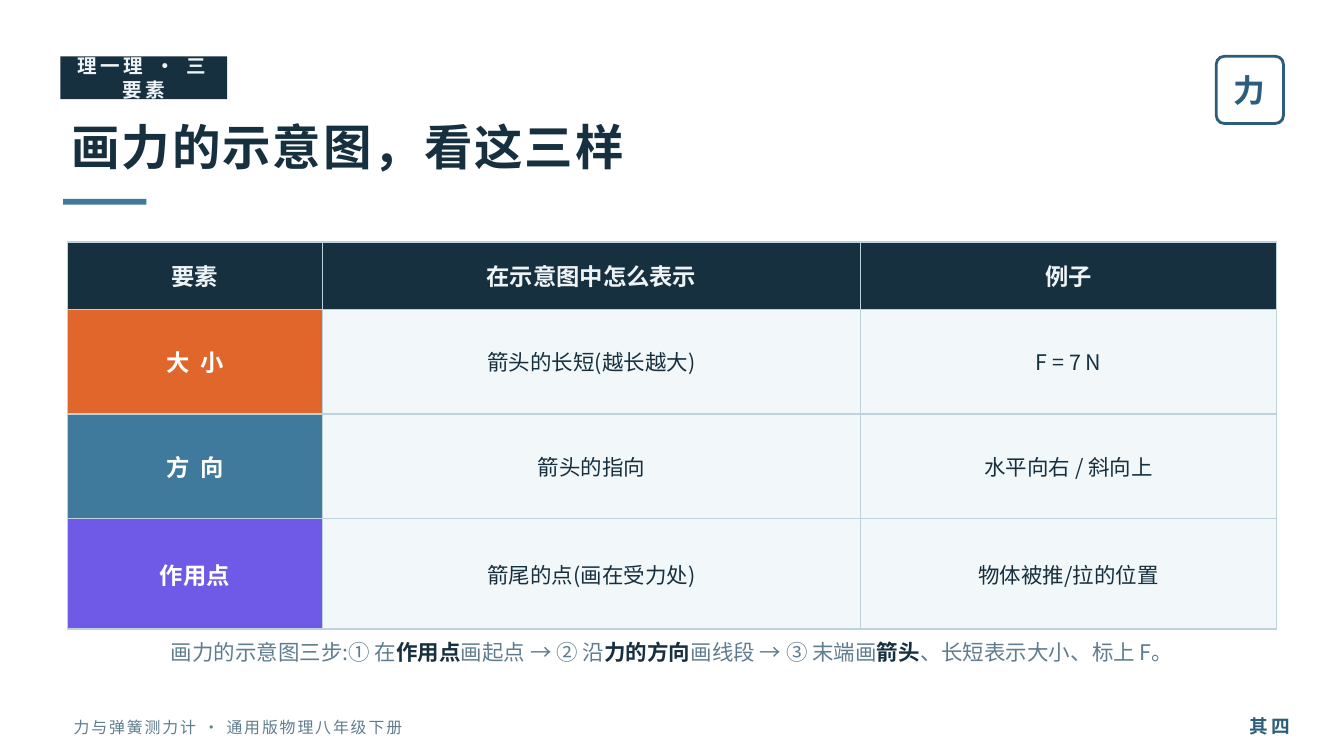
"""Build the lesson slide on the three elements of a force diagram."""
from lxml import etree
from pptx import Presentation
from pptx.dml.color import RGBColor
from pptx.enum.shapes import MSO_SHAPE
from pptx.enum.text import MSO_ANCHOR, MSO_AUTO_SIZE, PP_ALIGN
from pptx.oxml.ns import qn
from pptx.util import Pt

RECTANGLE, ROUNDED = MSO_SHAPE.RECTANGLE, MSO_SHAPE.ROUNDED_RECTANGLE
LEFT, CENTER, RIGHT = PP_ALIGN.LEFT, PP_ALIGN.CENTER, PP_ALIGN.RIGHT
MIDDLE = MSO_ANCHOR.MIDDLE
NO_AUTOFIT = MSO_AUTO_SIZE.NONE

FONT = "Noto Sans CJK SC"
NAVY = RGBColor(0x17, 0x30, 0x3F)
BLUE = RGBColor(0x2C, 0x5E, 0x7B)
STEEL = RGBColor(0x3F, 0x7A, 0x9C)
ORANGE = RGBColor(0xE0, 0x66, 0x2C)
VIOLET = RGBColor(0x6E, 0x5A, 0xE6)
GRAY = RGBColor(0x5F, 0x7D, 0x8E)
MIST = RGBColor(0xEE, 0xF3, 0xF6)
PALE = RGBColor(0xF2, 0xF7, 0xF9)
BORDER = RGBColor(0xBC, 0xD3, 0xDE)
WHITE = RGBColor(0xFF, 0xFF, 0xFF)


def add_run(paragraph, text, size, color, bold=False, spacing=0):
    run = paragraph.add_run()
    run.text = text
    for attribute, value in {"name": FONT, "size": Pt(size), "bold": bold}.items():
        setattr(run.font, attribute, value)
    run.font.color.rgb = color
    properties = run.font._element
    etree.SubElement(properties, qn("a:ea")).set("typeface", FONT)
    if spacing:
        properties.set("spc", str(spacing * 100))


def prepare_frame(frame, alignment):
    frame_format = {"word_wrap": True, "auto_size": NO_AUTOFIT, "vertical_anchor": MIDDLE}
    for attribute, value in frame_format.items():
        setattr(frame, attribute, value)
    paragraph = frame.paragraphs[0]
    paragraph.alignment = alignment
    return paragraph


prs = Presentation()
prs.slide_width, prs.slide_height = Pt(720), Pt(405)
slide = prs.slides.add_slide(prs.slide_layouts[5])
shapes = slide.shapes
slide.background.fill.solid()
slide.background.fill.fore_color.rgb = WHITE

title = shapes.title
title_box = {"left": 31, "top": 56.2, "width": 648, "height": 44.6}
for attribute, value in title_box.items():
    setattr(title, attribute, Pt(value))
add_run(prepare_frame(title.text_frame, LEFT), "画力的示意图，看这三样", 26, NAVY, True, 1)

blocks = [
    (RECTANGLE, (32.4, 30.2, 89.3, 23), NAVY, None, ("理一理 · 三要素", 10.5, MIST, True, 2)),
    (RECTANGLE, (33.8, 106.6, 44.6, 3), STEEL, None, None),
    (ROUNDED, (651.6, 30.2, 36, 36), None, BLUE, ("力", 17, BLUE, True)),
]
for preset, box, fill_color, line_color, label in blocks:
    block = shapes.add_shape(preset, *map(Pt, box))
    block.shadow.inherit = False
    if preset == ROUNDED:
        block.adjustments[0] = 0.12
    if fill_color:
        block.fill.solid()
        block.fill.fore_color.rgb = fill_color
    else:
        block.fill.background()
    if line_color:
        block.line.color.rgb = line_color
        block.line.width = Pt(1.5)
    else:
        block.line.fill.background()
    if label:
        add_run(prepare_frame(block.text_frame, CENTER), *label)

header = ["要素", "在示意图中怎么表示", "例子"]
elements = [
    (["大  小", "箭头的长短(越长越大)", "F = 7 N"], ORANGE),
    (["方  向", "箭头的指向", "水平向右 / 斜向上"], STEEL),
    (["作用点", "箭尾的点(画在受力处)", "物体被推/拉的位置"], VIOLET),
]
column_widths = [136.8, 288, 223.2]
row_heights = [36, 56.2, 56.2, 59]
summary = shapes.add_table(
    4, 3, Pt(36), Pt(129.6), Pt(sum(column_widths)), Pt(sum(row_heights))
).table
summary.horz_banding = False
for column, width in zip(summary.columns, column_widths):
    column.width = Pt(width)
for row, height in zip(summary.rows, row_heights):
    row.height = Pt(height)

for row_index, (texts, key_color) in enumerate([(header, NAVY), *elements]):
    for column_index, text in enumerate(texts):
        if row_index == 0:
            fill_color, style = NAVY, (12.5, MIST, True)
        elif column_index == 0:
            fill_color, style = key_color, (12.5, WHITE, True)
        else:
            fill_color, style = PALE, (11.5, NAVY)
        cell = summary.cell(row_index, column_index)
        cell.vertical_anchor = MIDDLE
        cell_properties = cell._tc.get_or_add_tcPr()
        for side in ("lnL", "lnR", "lnT", "lnB"):
            edge = etree.SubElement(cell_properties, qn(f"a:{side}"), w=str(Pt(0.75)))
            edge_fill = etree.SubElement(edge, qn("a:solidFill"))
            etree.SubElement(edge_fill, qn("a:srgbClr"), val=str(BORDER))
        cell.fill.solid()
        cell.fill.fore_color.rgb = fill_color
        cell_text = cell.text_frame.paragraphs[0]
        cell_text.alignment = CENTER
        add_run(cell_text, text, *style)

steps = [
    ("画力的示意图三步:① 在", 11.5, GRAY),
    ("作用点", 11.5, NAVY, True),
    ("画起点 → ② 沿", 11.5, GRAY),
    ("力的方向", 11.5, NAVY, True),
    ("画线段 → ③ 末端画", 11.5, GRAY),
    ("箭头", 11.5, NAVY, True),
    ("、长短表示大小、标上 F。", 11.5, GRAY),
]
course = [("力与弹簧测力计 · 通用版物理八年级下册", 8.5, GRAY, False, 1)]
page = [("其 四", 10, BLUE, True)]
notes = [
    ((36, 331.2, 648, 36), CENTER, steps),
    ((32.4, 378.7, 460.8, 21.6), LEFT, course),
    ((655.2, 377.3, 43.2, 23), RIGHT, page),
]
for box, alignment, runs in notes:
    note = shapes.add_textbox(*map(Pt, box))
    line = prepare_frame(note.text_frame, alignment)
    for run in runs:
        add_run(line, *run)

prs.save("out.pptx")
